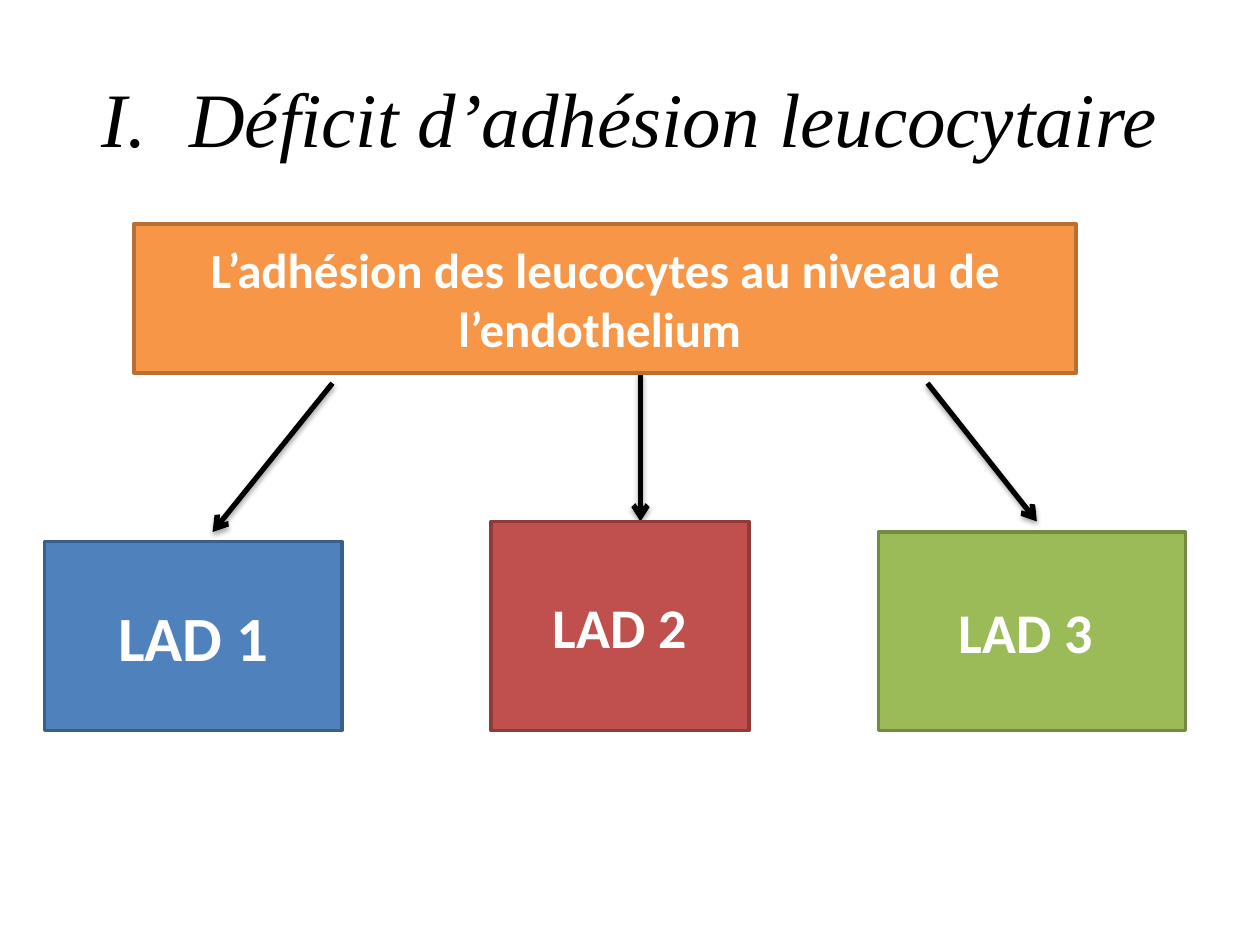
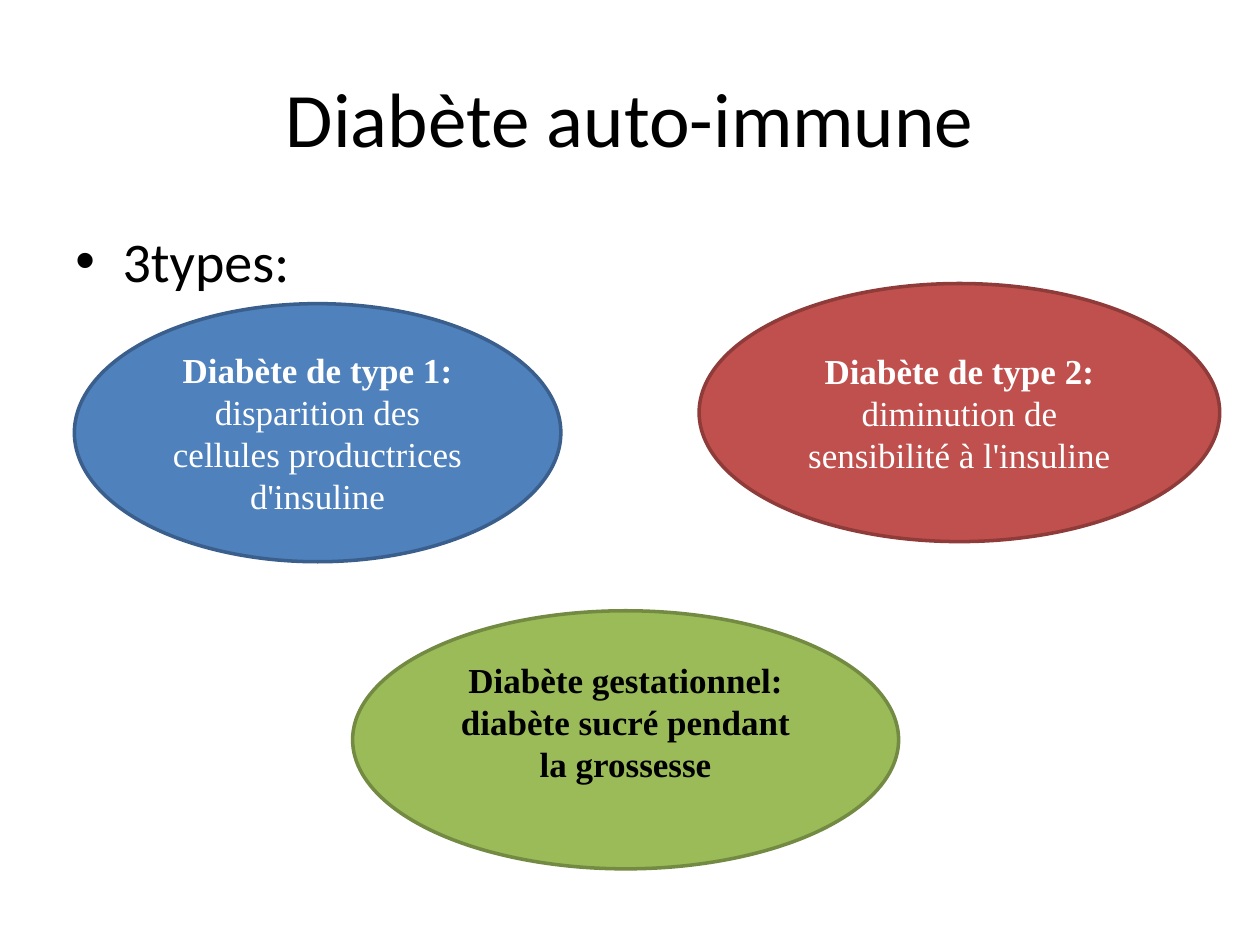
from lxml.etree import SubElement
from pptx import Presentation
from pptx.dml.color import RGBColor
from pptx.enum.shapes import MSO_CONNECTOR as Connector, MSO_SHAPE as Shape
from pptx.enum.text import MSO_ANCHOR as Anchor, PP_ALIGN as Align
from pptx.oxml.ns import qn
from pptx.util import Pt

COLORS = {
    "black": "000000", "white": "FFFFFF",
    "blue": "4F81BD", "blue_edge": "3A5F8C",
    "red": "C0504D", "red_edge": "8E3B39",
    "green": "9BBB59", "green_edge": "738A42",
    "orange": "F79646", "orange_edge": "B76F34",
}
SANS, SERIF = "Calibri", "Times New Roman"
TITLE_ONLY = 5
TITLE_AREA = (36, 21.6, 648, 90)
BOX_BOTTOM = 417.5
ELLIPSE_HEIGHT = 147.5


def color(name):
    return RGBColor.from_string(COLORS[name])


def style(para, size, face=SANS, ink="black", bold=False, italic=False, align=Align.CENTER):
    para.alignment = align
    font = para.font
    font.name, font.size, font.bold, font.italic = face, Pt(size), bold, italic
    font.color.rgb = color(ink)


def add_bullet(para, indent, tag, **attributes):
    properties = para._p.get_or_add_pPr()
    properties.set("marL", str(Pt(indent)))
    properties.set("indent", str(-Pt(indent)))
    if tag == "a:buChar":
        SubElement(properties, qn("a:buFont"), typeface="Arial")
    SubElement(properties, qn(tag), **attributes)


def add_titled_page(deck, text, face=SANS, italic=False, numbered=False):
    page = deck.slides.add_slide(deck.slide_layouts[TITLE_ONLY])
    title = page.shapes.title
    title.left, title.top, title.width, title.height = map(Pt, TITLE_AREA)
    title.text_frame.text = text
    title.text_frame.vertical_anchor = Anchor.MIDDLE
    para = title.text_frame.paragraphs[0]
    if numbered:
        add_bullet(para, 50, "a:buAutoNum", type="romanUcPeriod")
    style(para, 44, face, italic=italic)
    return page


def add_panel(page, kind, area, fill, lines, size, face=SANS, ink="white", bolds=(True,)):
    panel = page.shapes.add_shape(kind, *map(Pt, area))
    panel.shadow.inherit = False
    panel.fill.solid()
    panel.fill.fore_color.rgb = color(fill)
    panel.line.color.rgb = color(fill + "_edge")
    panel.line.width = Pt(2)
    frame = panel.text_frame
    frame.word_wrap = True
    frame.vertical_anchor = Anchor.MIDDLE
    frame.text = "\n".join(lines)
    for para, bold in zip(frame.paragraphs, bolds):
        style(para, size, face, ink, bold)
    return panel


def add_arrow(page, start, end):
    arrow = page.shapes.add_connector(Connector.STRAIGHT, *map(Pt, start + end))
    arrow.line.color.rgb = color("black")
    arrow.line.width = Pt(3)
    SubElement(arrow.line._get_or_add_ln(), qn("a:tailEnd"), type="arrow")
    effects = SubElement(arrow._element.spPr, qn("a:effectLst"))
    shadow = SubElement(effects, qn("a:outerShdw"), blurRad=str(Pt(3.1)),
                        dist=str(Pt(1.8)), dir="5400000", rotWithShape="0")
    shade = SubElement(shadow, qn("a:srgbClr"), val=COLORS["black"])
    SubElement(shade, qn("a:alpha"), val="35000")


def add_bullet_text(page, area, text):
    box = page.shapes.add_textbox(*map(Pt, area))
    box.text_frame.word_wrap = True
    box.text_frame.text = text
    para = box.text_frame.paragraphs[0]
    add_bullet(para, 27, "a:buChar", char="•")
    para.space_before = Pt(6.4)
    style(para, 32, align=Align.LEFT)


def build_adhesion_page(deck):
    page = add_titled_page(deck, "Déficit d’adhésion leucocytaire", SERIF,
                           italic=True, numbered=True)
    for start, end in (
        ((190, 219), (121.5, 304)),
        ((366, 213), (366, 298)),
        ((530, 219), (592.5, 298)),
    ):
        add_arrow(page, start, end)
    for text, left, top, width, fill, size in (
        ("LAD 1", 25.5, 309.5, 170, "blue", 36),
        ("LAD 2", 280.5, 298, 147.5, "red", 32),
        ("LAD 3 ", 502, 304, 175.5, "green", 32),
    ):
        add_panel(page, Shape.RECTANGLE, (left, top, width, BOX_BOTTOM - top),
                  fill, [text], size)
    add_panel(page, Shape.RECTANGLE, (76.5, 128, 538.5, 85), "orange",
              ["L’adhésion des leucocytes au niveau de l’endothelium "], 28)


def build_diabetes_page(deck):
    page = add_titled_page(deck, "Diabète auto-immune")
    add_bullet_text(page, (36, 126, 648, 356.4), "3types:")
    for left, top, width, fill, ink, bolds, lines in (
        (42.5, 173.5, 278, "blue", "white", (True, False),
         ("Diabète de type 1:", "disparition des cellules productrices d'insuline")),
        (399.5, 162, 297.5, "red", "white", (True, False),
         ("Diabète de type 2:", "diminution de sensibilité à l'insuline")),
        (201.5, 349, 312, "green", "black", (True, True),
         ("Diabète gestationnel:", "diabète sucré pendant la grossesse")),
    ):
        ellipse = add_panel(page, Shape.OVAL, (left, top, width, ELLIPSE_HEIGHT),
                            fill, lines, 20, SERIF, ink, bolds)
    ellipse.text_frame.margin_bottom = Pt(25)


def main():
    deck = Presentation()
    deck.slide_width, deck.slide_height = Pt(720), Pt(540)
    build_adhesion_page(deck)
    build_diabetes_page(deck)
    deck.save("out.pptx")


if __name__ == "__main__":
    main()
